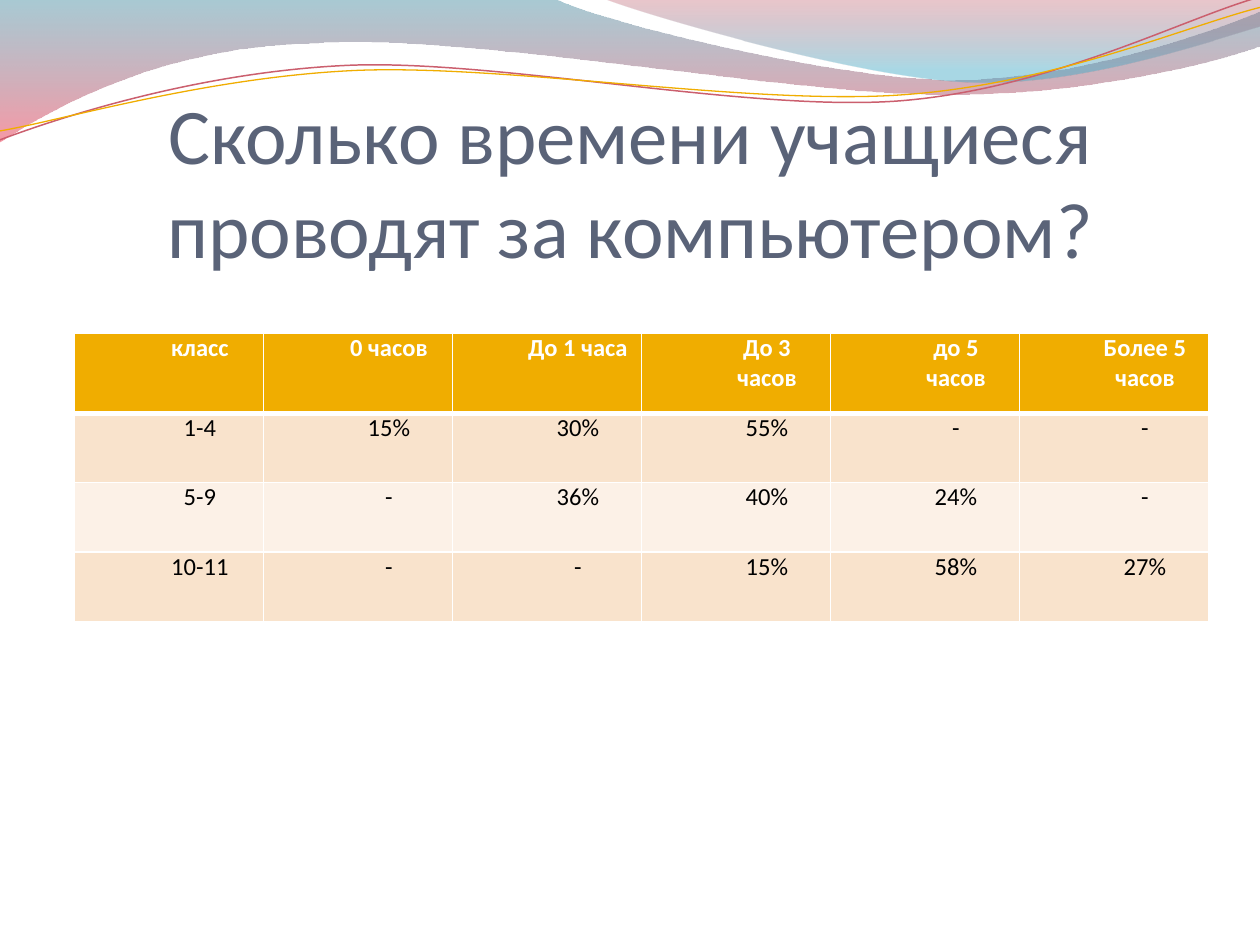
"""Build a slide with a table of pupils' computer time by school grade."""
import dataclasses
import typing

import lxml.etree
import pptx
import pptx.dml.color
import pptx.enum.text
import pptx.oxml
import pptx.oxml.ns
import pptx.util

Cm = pptx.util.Cm
Pt = pptx.util.Pt
qn = pptx.oxml.ns.qn
FONT = "Calibri"
WHITE = "FFFFFF"
AMBER = "F0AD00"


@dataclasses.dataclass(frozen=True)
class Stop:
    position: float
    colour: str
    opacity: int


@dataclasses.dataclass(frozen=True)
class Wave:
    start: tuple[float, float]
    segments: tuple[tuple[float, ...], ...]
    stops: tuple[Stop, ...] = ()
    line_colour: str = ""
    line_width: float = 0
    rotation: float = 0


WAVES = (
    Wave(
        (0, 0),
        (
            (11.18, -0.03),
            (12.09, 0.43, 16.87, 1.6, 19.25, 1.6),
            (21.67, 1.6, 24.33, 0.66, 25.4, 0.23),
            (25.43, 0.91),
            (24.97, 1.12, 22.1, 1.93, 18.95, 1.9),
            (15.8, 1.9, 9.7, 0.71, 6.53, 0.86),
            (3.28, 0.91, 1.17, 2.11, -0.03, 2.87),
            (0, 0),
        ),
        stops=(Stop(0, "3F8A9F", 45), Stop(1, "EF445B", 55)),
    ),
    Wave(
        (12.17, -0.03),
        (
            (12.93, 0.28, 17.32, 1.57, 19.53, 1.65),
            (21.74, 1.75, 24.41, 0.81, 25.4, 0.53),
            (25.4, 0),
            (12.17, -0.03),
        ),
        stops=(Stop(0, "B84253", 30), Stop(0.8, "42ABC7", 45)),
    ),
    Wave(
        (-0.05, 2.22),
        (
            (1.19, 1.82, 4.02, 1.04, 7.05, 1.05),
            (10.05, 1.07, 15.02, 2.37, 18.08, 2.29),
            (21.13, 2.2, 23.87, 0.91, 25.41, 0.55),
        ),
        line_colour="CB5F6E",
        line_width=0.85,
        rotation=357.3,
    ),
    Wave(
        (-0.04, 2.04),
        (
            (1.16, 1.9, 4.18, 1.15, 7.2, 1.16),
            (10.25, 1.18, 15.13, 2.25, 18.18, 2.17),
            (21.21, 2.1, 23.93, 1.06, 25.45, 0.75),
        ),
        line_colour=AMBER,
        line_width=0.75,
        rotation=357.3,
    ),
)

HOURS_BY_GRADE = (
    ("класс", "0 часов", "До 1 часа", "До 3 часов", "до 5 часов", "Более 5 часов"),
    ("1-4", "15%", "30%", "55%", "-", "-"),
    ("5-9", "-", "36%", "40%", "24%", "-"),
    ("10-11", "-", "-", "15%", "58%", "27%"),
)
ROW_FILLS = (AMBER, "F9E3CC", "FCF1E7", "F9E3CC")
ROW_HEIGHTS = (1.61, 1.4, 1.4, 1.4)
COLUMN_WIDTH = 3.81


def rgb(colour: str) -> pptx.dml.color.RGBColor:
    return pptx.dml.color.RGBColor.from_string(colour)


def apply(target: typing.Any, values: dict[str, typing.Any]) -> None:
    for name, value in values.items():
        setattr(target, name, value)


def write(paragraph: typing.Any, text: str, size: float, colour: str, bold: bool = False) -> None:
    run = paragraph.add_run()
    run.text = text
    apply(run.font, {"name": FONT, "size": Pt(size), "bold": bold})
    run.font.color.rgb = rgb(colour)
    paragraph.alignment = pptx.enum.text.PP_ALIGN.CENTER


def build_ribbon(slide: typing.Any, wave: Wave) -> typing.Any:
    builder = slide.shapes.build_freeform(*map(Cm, wave.start))
    for segment in wave.segments:
        points = [(Cm(x), Cm(y)) for x, y in zip(segment[::2], segment[1::2])]
        builder.add_line_segments(points, close=False)
    ribbon = builder.convert_to_shape()
    outline = next(ribbon.element.spPr.iter(qn("a:path")))
    vertices = iter(outline.findall(qn("a:lnTo")))
    for segment in wave.segments:
        corner = next(vertices)
        if len(segment) == 6:
            curve = lxml.etree.Element(qn("a:cubicBezTo"))
            corner.addprevious(curve)
            for vertex in (corner, next(vertices), next(vertices)):
                curve.append(vertex[0])
                outline.remove(vertex)
    if wave.stops:
        lxml.etree.SubElement(outline, qn("a:close"))
    return ribbon


def draw_wave(slide: typing.Any, wave: Wave) -> None:
    ribbon = build_ribbon(slide, wave)
    ribbon.shadow.inherit = False
    ribbon.rotation = wave.rotation
    if not wave.stops:
        ribbon.fill.background()
        ribbon.line.color.rgb = rgb(wave.line_colour)
        ribbon.line.width = Pt(wave.line_width)
        return
    ribbon.line.fill.background()
    ribbon.fill.gradient()
    ribbon.fill.gradient_angle = 270
    for gradient_stop, stop in zip(ribbon.fill.gradient_stops, wave.stops):
        gradient_stop.position = stop.position
        gradient_stop.color.rgb = rgb(stop.colour)
    tints = ribbon.element.spPr.iter(qn("a:srgbClr"))
    for tint, stop in zip(tints, wave.stops):
        lxml.etree.SubElement(tint, qn("a:alpha"), val=str(stop.opacity * 1000))


def draw_title(slide: typing.Any, text: str) -> None:
    frame = slide.shapes.add_textbox(Cm(1.27), Cm(1.96), Cm(22.86), Cm(3.58)).text_frame
    apply(frame, {
        "word_wrap": True,
        "vertical_anchor": pptx.enum.text.MSO_ANCHOR.BOTTOM,
        "margin_left": 0,
        "margin_right": 0,
        "margin_top": Cm(0.13),
        "margin_bottom": 0,
    })
    write(frame.paragraphs[0], text, 45, "5A6378")


def set_borders(cell: typing.Any, bottom: float, top: float) -> None:
    properties = cell._tc.get_or_add_tcPr()
    widths = {"lnL": 1, "lnR": 1, "lnT": top, "lnB": bottom}
    for index, (side, width) in enumerate(widths.items()):
        properties.insert(index, pptx.oxml.parse_xml(
            f'<a:{side} {pptx.oxml.ns.nsdecls("a")} w="{Pt(width)}">'
            f'<a:solidFill><a:srgbClr val="{WHITE}"/></a:solidFill></a:{side}>'))


def draw_table(slide: typing.Any) -> None:
    columns = len(HOURS_BY_GRADE[0])
    hours = slide.shapes.add_table(
        len(HOURS_BY_GRADE), columns, Cm(1.5), Cm(6.72),
        Cm(COLUMN_WIDTH * columns), Cm(sum(ROW_HEIGHTS))).table
    for column in hours.columns:
        column.width = Cm(COLUMN_WIDTH)
    for index, texts in enumerate(HOURS_BY_GRADE):
        header = index == 0
        hours.rows[index].height = Cm(ROW_HEIGHTS[index])
        for cell, text in zip(hours.rows[index].cells, texts):
            apply(cell, {"margin_left": Cm(0.18), "margin_right": Cm(0.18),
                         "margin_top": 0, "margin_bottom": 0})
            cell.fill.solid()
            cell.fill.fore_color.rgb = rgb(ROW_FILLS[index])
            set_borders(cell, bottom=3 if header else 1, top=3 if index == 1 else 1)
            paragraph = cell.text_frame.paragraphs[0]
            write(paragraph, text, 14, WHITE if header else "000000", header)
            paragraph._p.get_or_add_pPr().set("marL", str(Cm(1.25)))


def main() -> None:
    deck = pptx.Presentation()
    apply(deck, {"slide_width": Cm(25.4), "slide_height": Cm(19.05)})
    slide = deck.slides.add_slide(deck.slide_layouts[6])
    for wave in WAVES:
        draw_wave(slide, wave)
    draw_title(slide, "Сколько времени учащиеся проводят за компьютером?")
    draw_table(slide)
    deck.save("out.pptx")


if __name__ == "__main__":
    main()
